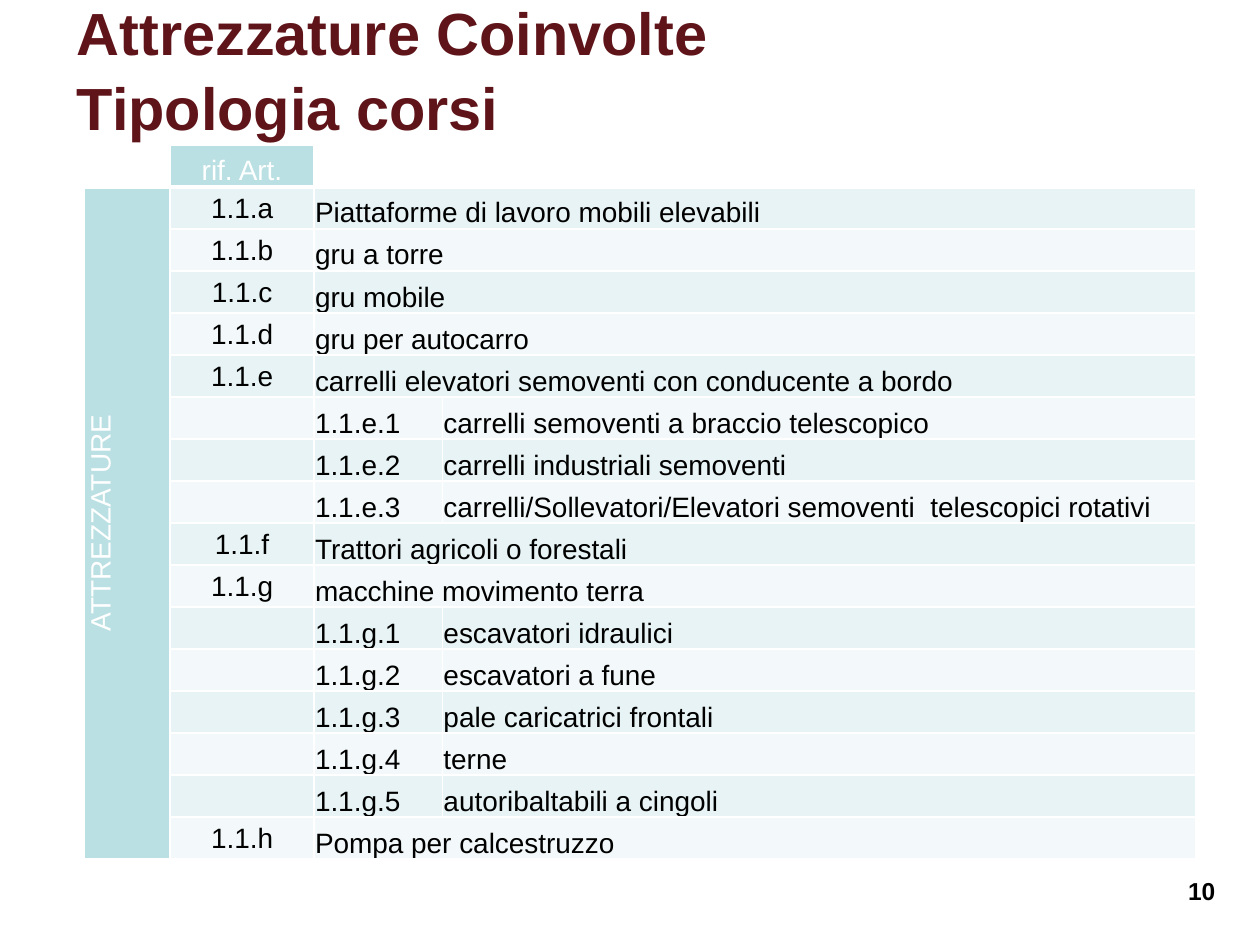
from lxml import etree
from pptx import Presentation
from pptx.dml.color import RGBColor
from pptx.enum import text
from pptx.oxml import ns
from pptx.util import Cm, Pt

FONT = "Arial"
MAROON = RGBColor(0x5F, 0x14, 0x19)
BLACK = RGBColor(0x00, 0x00, 0x00)
WHITE = RGBColor(0xFF, 0xFF, 0xFF)
TEAL = RGBColor(0xBB, 0xE0, 0xE3)
BANDS = (RGBColor(0xE7, 0xF3, 0xF4), RGBColor(0xF3, 0xF9, 0xFA))

CENTER = text.PP_ALIGN.CENTER
LEFT = text.PP_ALIGN.LEFT
MIDDLE = text.MSO_ANCHOR.MIDDLE
BOTTOM = text.MSO_ANCHOR.BOTTOM

COLUMN_WIDTHS = (Cm(1.73), Cm(2.9), Cm(2.59), Cm(15.19))
EQUIPMENT = (
    ("1.1.a", "Piattaforme di lavoro mobili elevabili"),
    ("1.1.b", "gru a torre"),
    ("1.1.c", "gru mobile"),
    ("1.1.d", "gru per autocarro"),
    ("1.1.e", "carrelli elevatori semoventi con conducente a bordo"),
    ("1.1.e.1", "carrelli semoventi a braccio telescopico"),
    ("1.1.e.2", "carrelli industriali semoventi"),
    ("1.1.e.3", "carrelli/Sollevatori/Elevatori semoventi  telescopici rotativi"),
    ("1.1.f", "Trattori agricoli o forestali"),
    ("1.1.g", "macchine movimento terra"),
    ("1.1.g.1", "escavatori idraulici"),
    ("1.1.g.2", "escavatori a fune"),
    ("1.1.g.3", "pale caricatrici frontali"),
    ("1.1.g.4", "terne"),
    ("1.1.g.5", "autoribaltabili a cingoli"),
    ("1.1.h", "Pompa per calcestruzzo"),
)


def format_spans(para, size, color, bold=False):
    for span in para.runs:
        span.font.name = FONT
        span.font.size = Pt(size)
        span.font.bold = bold
        span.font.color.rgb = color


def add_label(page, box_area, words, size, color, anchor, spacing=1.0):
    box = page.shapes.add_textbox(*box_area)
    frame = box.text_frame
    frame.word_wrap = True
    frame.vertical_anchor = anchor
    para = frame.paragraphs[0]
    para.text = words
    para.line_spacing = spacing
    format_spans(para, size, color, bold=True)


def style_cell(cell, fill, bottom_width):
    cell.margin_left = cell.margin_right = cell.margin_top = Cm(0.02)
    cell.margin_bottom = 0
    properties = cell._tc.get_or_add_tcPr()
    for side, width in (("L", 1), ("R", 1), ("T", 1), ("B", bottom_width)):
        line = etree.SubElement(properties, ns.qn(f"a:ln{side}"), w=str(Pt(width)))
        solid = etree.SubElement(line, ns.qn("a:solidFill"))
        etree.SubElement(solid, ns.qn("a:srgbClr"), val=str(WHITE))
    cell.fill.solid()
    cell.fill.fore_color.rgb = fill


def write_cell(cell, words, color=BLACK, alignment=LEFT, anchor=BOTTOM):
    cell.vertical_anchor = anchor
    para = cell.text_frame.paragraphs[0]
    para.text = words
    para.alignment = alignment
    format_spans(para, 16, color)


def add_equipment_table(page, left, top, height):
    row_count = len(EQUIPMENT) + 1
    frame = page.shapes.add_table(
        row_count, len(COLUMN_WIDTHS), left, top, sum(COLUMN_WIDTHS), height
    )
    table = frame.table
    table.first_row = table.horz_banding = False
    for column, width in zip(table.columns, COLUMN_WIDTHS):
        column.width = width

    for row_index, row in enumerate(table.rows):
        row.height = height // row_count
        for column_index, cell in enumerate(row.cells):
            if row_index == 0:
                fill = TEAL if column_index == 1 else WHITE
            else:
                fill = BANDS[(row_index - 1) % 2] if column_index else TEAL
            style_cell(cell, fill, bottom_width=1 if row_index else 3)

    write_cell(table.cell(0, 1), "rif. Art.", WHITE, CENTER)
    side = table.cell(1, 0)
    side.merge(table.cell(row_count - 1, 0))
    write_cell(side, "ATTREZZATURE", WHITE, CENTER, MIDDLE)
    side._tc.get_or_add_tcPr().set("vert", "vert270")

    for row_index, (reference, description) in enumerate(EQUIPMENT, start=1):
        if reference.count(".") == 2:
            write_cell(table.cell(row_index, 1), reference, BLACK, CENTER, MIDDLE)
            table.cell(row_index, 2).merge(table.cell(row_index, 3))
            write_cell(table.cell(row_index, 2), description)
        else:
            write_cell(table.cell(row_index, 2), reference)
            write_cell(table.cell(row_index, 3), description)


def main():
    deck = Presentation()
    deck.slide_width, deck.slide_height = Cm(25.4), Cm(19.05)
    page = deck.slides.add_slide(deck.slide_layouts[6])
    add_label(page, (Cm(23.7), Cm(17.53), Cm(2.2), Cm(0.84)), "10", 14, BLACK,
              text.MSO_ANCHOR.TOP)
    add_label(page, (Cm(1.3), 0, Cm(21.6), Cm(2.72)),
              "Attrezzature Coinvolte \vTipologia corsi", 34, MAROON, MIDDLE, 1.05)
    add_equipment_table(page, Cm(1.7), Cm(2.92), Cm(14.4))
    deck.save("out.pptx")


if __name__ == "__main__":
    main()
